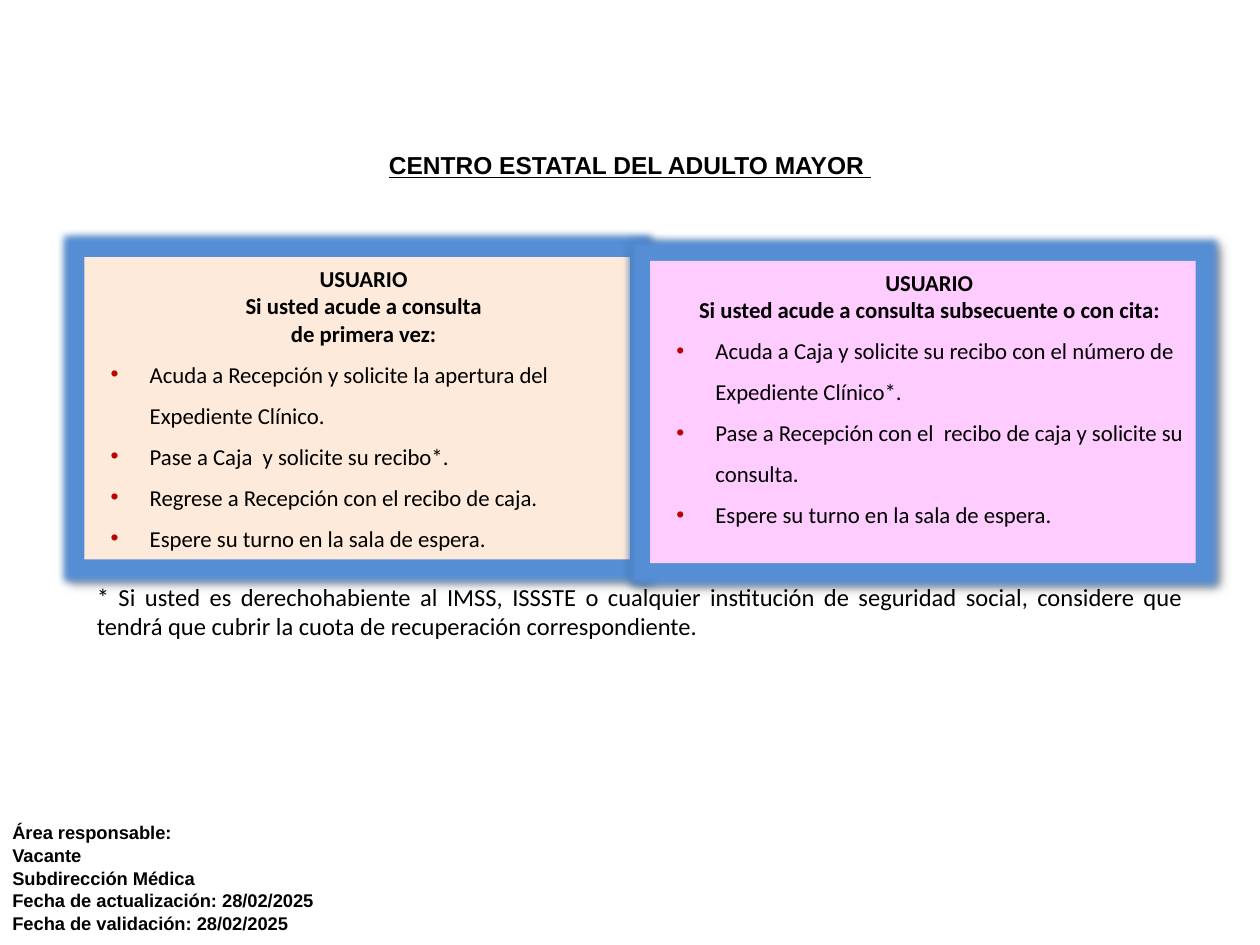
from dataclasses import dataclass

from lxml.etree import SubElement
from pptx import Presentation
from pptx.dml.color import RGBColor
from pptx.enum.shapes import MSO_SHAPE
from pptx.enum.text import MSO_ANCHOR, PP_ALIGN
from pptx.oxml.ns import qn
from pptx.util import Inches, Pt


@dataclass
class Panel:
    left: float
    top: float
    fill: str
    heading: list[str]
    steps: list[str]
    bottom_inset: float = 0.05


@dataclass
class Note:
    left: float
    top: float
    width: float
    height: float
    text: str
    font: str
    size: float
    align: PP_ALIGN = PP_ALIGN.LEFT
    bold: bool = False
    underline: bool = False
    top_inset: float = 0.05
    line_spacing: float = 1.0


PANEL_WIDTH, PANEL_HEIGHT = 4.33, 2.4

PANELS = [
    Panel(0.67, 2.04, "FDEADA",
          ["USUARIO", "Si usted acude a consulta", "de primera vez:"],
          ["Acuda a Recepción y solicite la apertura del Expediente Clínico.",
           "Pase a Caja  y solicite su recibo*.",
           "Regrese a Recepción con el recibo de caja.",
           "Espere su turno en la sala de espera."]),
    Panel(5.16, 2.07, "FFCCFF",
          ["USUARIO", "Si usted acude a consulta subsecuente o con cita:"],
          ["Acuda a Caja y solicite su recibo con el número de Expediente Clínico*.",
           "Pase a Recepción con el  recibo de caja y solicite su consulta.",
           "Espere su turno en la sala de espera."],
          bottom_inset=0.27),
]

NOTES = [
    Note(0, 6.46, 3.7, 0.98,
         "Área responsable:\nVacante\nSubdirección Médica\n"
         "Fecha de actualización: 28/02/2025\nFecha de validación: 28/02/2025",
         "Arial", 10.5, bold=True, line_spacing=1.04),
    Note(1.06, 0.92, 7.88, 0.71, "CENTRO ESTATAL DEL ADULTO MAYOR ", "Arial", 14,
         PP_ALIGN.CENTER, bold=True, underline=True, top_inset=0.27),
    Note(0.67, 4.57, 8.82, 0.57,
         "* Si usted es derechohabiente al IMSS, ISSSTE o cualquier institución de "
         "seguridad social, considere que tendrá que cubrir la cuota de recuperación "
         "correspondiente.",
         "Calibri", 14, PP_ALIGN.JUSTIFY),
]


def color(value: str) -> RGBColor:
    return RGBColor.from_string(value)


def format_runs(para, font: str, size: float, bold: bool, underline: bool = False) -> None:
    for span in para.runs:
        span.font.name = font
        span.font.size = Pt(size)
        span.font.bold = bold
        span.font.underline = underline
        span.font.color.rgb = color("000000")


def add_glow_and_shadow(shape) -> None:
    effects = shape._element.spPr.find(qn("a:effectLst"))
    glow = SubElement(effects, qn("a:glow"), rad=str(Pt(8)))
    SubElement(glow, qn("a:srgbClr"), val="558ED5")
    shadow = SubElement(effects, qn("a:outerShdw"), blurRad=str(Pt(4)),
                        dist=str(Pt(3)), dir="2700000", algn="tl", rotWithShape="0")
    tint = SubElement(shadow, qn("a:srgbClr"), val="000000")
    SubElement(tint, qn("a:alpha"), val="40000")


def set_indent(para, margin: float, indent: float) -> None:
    properties = para._p.get_or_add_pPr()
    properties.set("marL", str(Inches(margin)))
    properties.set("indent", str(Inches(indent)))


def add_bullet(para) -> None:
    properties = para._p.get_or_add_pPr()
    bullet_color = SubElement(properties, qn("a:buClr"))
    SubElement(bullet_color, qn("a:srgbClr"), val="C00000")
    SubElement(properties, qn("a:buFont"), typeface="Arial")
    SubElement(properties, qn("a:buChar"), char="•")


def add_panel(page, panel: Panel) -> None:
    box = page.shapes.add_shape(MSO_SHAPE.RECTANGLE, Inches(panel.left), Inches(panel.top),
                                Inches(PANEL_WIDTH), Inches(PANEL_HEIGHT))
    box.shadow.inherit = False
    add_glow_and_shadow(box)
    box.fill.solid()
    box.fill.fore_color.rgb = color(panel.fill)
    box.line.fill.background()
    frame = box.text_frame
    frame.word_wrap = True
    frame.vertical_anchor = MSO_ANCHOR.MIDDLE
    frame.margin_bottom = Inches(panel.bottom_inset)
    frame.text = "\n".join(panel.heading + panel.steps)
    for index, para in enumerate(frame.paragraphs):
        is_heading = index < len(panel.heading)
        if is_heading:
            set_indent(para, 0.1, 0)
            para.alignment = PP_ALIGN.CENTER
        else:
            add_bullet(para)
            set_indent(para, 0.42, -0.31)
            para.alignment = PP_ALIGN.LEFT
            para.line_spacing = 1.5
        format_runs(para, "Calibri", 13, is_heading)


def add_note(page, note: Note) -> None:
    box = page.shapes.add_textbox(Inches(note.left), Inches(note.top),
                                  Inches(note.width), Inches(note.height))
    frame = box.text_frame
    frame.word_wrap = True
    frame.margin_top = Inches(note.top_inset)
    frame.text = note.text
    for para in frame.paragraphs:
        para.alignment = note.align
        para.line_spacing = note.line_spacing
        format_runs(para, note.font, note.size, note.bold, note.underline)


def main() -> None:
    deck = Presentation()
    deck.slide_width, deck.slide_height = Inches(10), Inches(7.5)
    page = deck.slides.add_slide(deck.slide_layouts[6])
    for panel in PANELS:
        add_panel(page, panel)
    for note in NOTES:
        add_note(page, note)
    deck.save("out.pptx")


if __name__ == "__main__":
    main()
